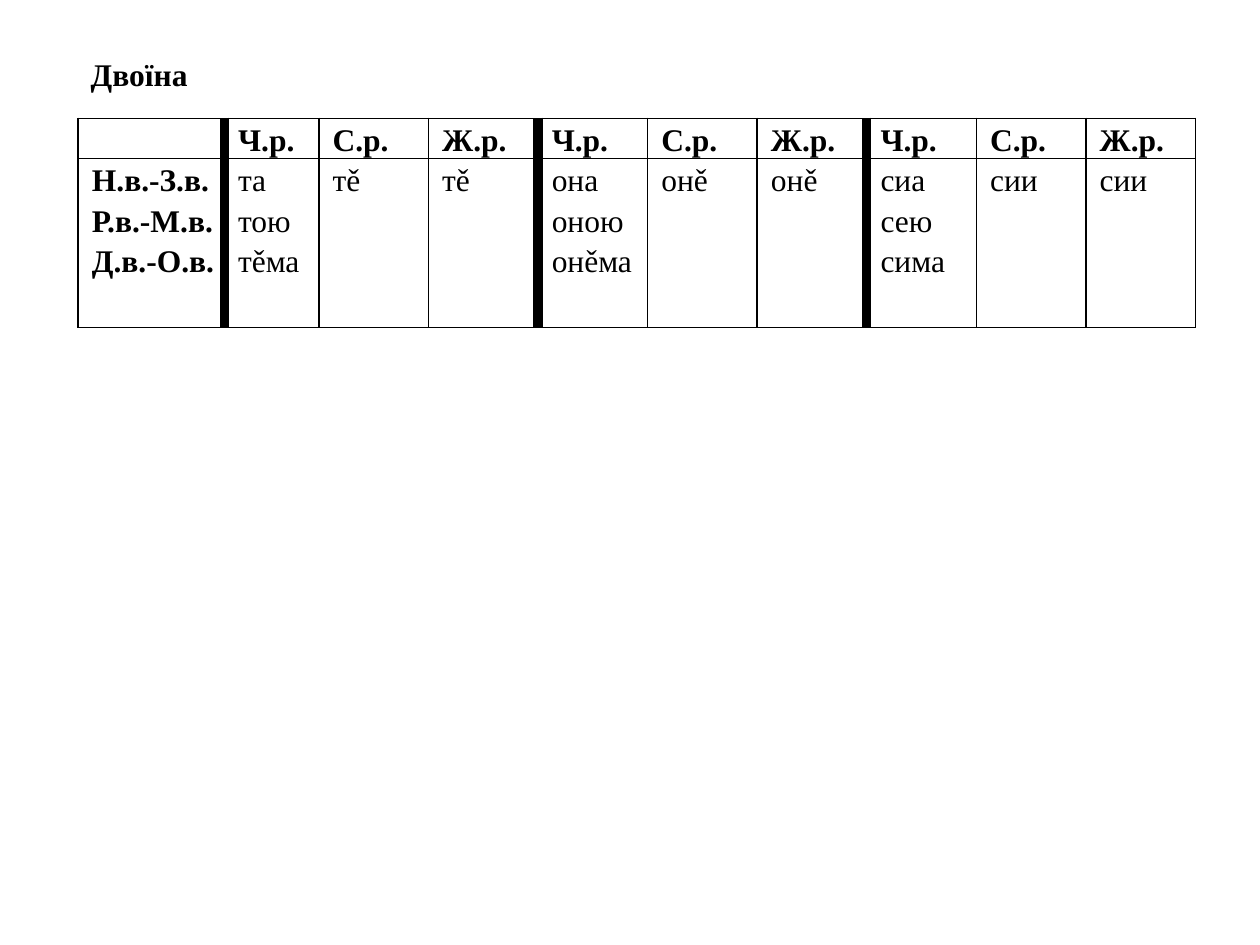
import pptx
import pptx.util
import pptx.dml.color
import pptx.enum.text
import pptx.oxml
import pptx.oxml.ns

INCH, PT = pptx.util.Inches, pptx.util.Pt
FONT, INK = "Times New Roman", "000000"

# Content: cases down the side, three genders for each pronoun
TITLE = "Двоїна"
CASES = ["Н.в.-З.в.", "Р.в.-М.в.", "Д.в.-О.в."]
GENDERS = ["Ч.р.", "С.р.", "Ж.р."]
PRONOUNS = [
    (["та", "тою", "тěма"], ["тě"], ["тě"]),
    (["она", "оною", "онěма"], ["онě"], ["онě"]),
    (["сиа", "сею", "сима"], ["сии"], ["сии"]),
]

# Layout
LEFT, TOP = 0.62, 0.94
COLS = [1.16, 0.75] + [0.87] * 8
ROWS = [0.28, 1.34]
THIN, THICK = 1, 6


def color(code):
    return pptx.dml.color.RGBColor.from_string(code)


def style(par, bold):
    font = par.font
    font.name, font.size, font.bold = FONT, PT(18), bold
    font.color.rgb = color(INK)


def border(cell, sides):
    props = cell._tc.get_or_add_tcPr()
    for pos, (side, width) in enumerate(sides.items()):
        line = pptx.oxml.parse_xml(
            f'<a:ln{side} {pptx.oxml.ns.nsdecls("a")} w="{PT(width)}">'
            f'<a:solidFill><a:srgbClr val="{INK}"/></a:solidFill></a:ln{side}>')
        props.insert(pos, line)


def write(cell, lines, bold):
    cell.margin_left = cell.margin_right = INCH(0.07)
    cell.margin_top = cell.margin_bottom = 0
    cell.fill.background()
    cell.text = "\n".join(lines)
    for par in cell.text_frame.paragraphs:
        par.line_spacing = 1.15
        par._p.get_or_add_pPr().set("marL", str(INCH(0.04)))
        style(par, bold)


def main():
    deck = pptx.Presentation()
    deck.slide_width, deck.slide_height = INCH(10), INCH(7.5)
    slide = deck.slides.add_slide(deck.slide_layouts[5])

    # Title
    title = slide.shapes.title
    title.left, title.top = INCH(LEFT), INCH(0.39)
    title.width, title.height = INCH(1.33), INCH(0.4)
    title.text = TITLE
    frame = title.text_frame
    frame.vertical_anchor = pptx.enum.text.MSO_ANCHOR.MIDDLE
    frame.paragraphs[0].alignment = pptx.enum.text.PP_ALIGN.LEFT
    style(frame.paragraphs[0], True)

    # Table
    head = [[]] + [[name] for name in GENDERS] * len(PRONOUNS)
    body = [CASES] + [forms for group in PRONOUNS for forms in group]
    table = slide.shapes.add_table(
        len(ROWS), len(COLS), INCH(LEFT), INCH(TOP),
        INCH(sum(COLS)), INCH(sum(ROWS))).table
    table.first_row = table.horz_banding = False
    for col, width in zip(table.columns, COLS):
        col.width = INCH(width)
    for row, height in zip(table.rows, ROWS):
        row.height = INCH(height)

    # Cells, with a thick rule before each pronoun
    last = len(COLS) - 1
    for r, row in enumerate([head, body]):
        for c, lines in enumerate(row):
            cell = table.cell(r, c)
            write(cell, lines, r == 0 or c == 0)
            border(cell, {
                "L": THICK if c and c % 3 == 1 else THIN,
                "R": THICK if c % 3 == 0 and c < last else THIN,
                "T": THIN, "B": THIN})

    deck.save("out.pptx")


if __name__ == "__main__":
    main()
